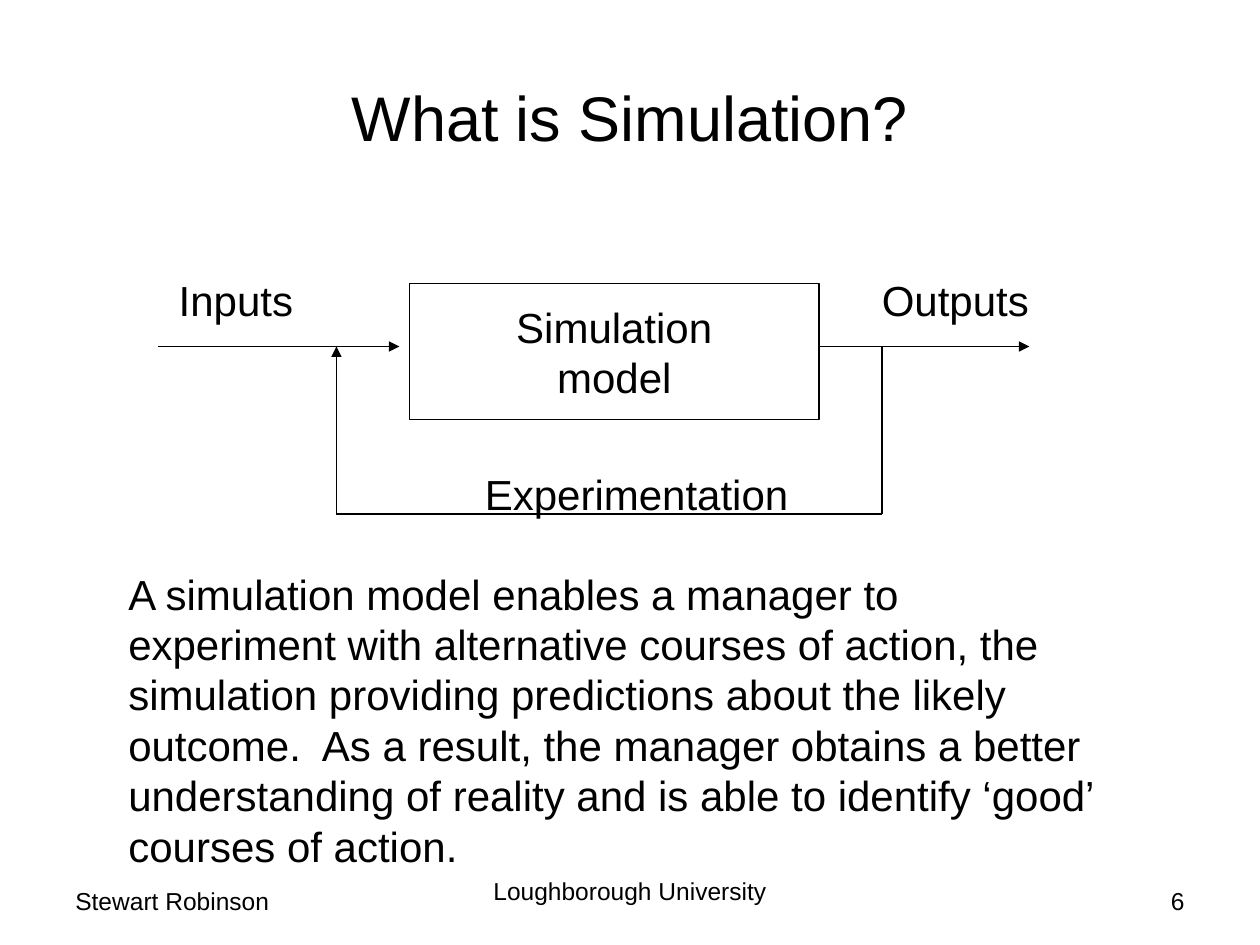
from lxml.etree import SubElement
from pptx import Presentation
from pptx.dml.color import RGBColor
from pptx.enum.shapes import MSO_CONNECTOR, MSO_SHAPE
from pptx.enum.text import MSO_ANCHOR, MSO_AUTO_SIZE, PP_ALIGN
from pptx.oxml.ns import qn
from pptx.util import Inches, Pt

BLACK = "000000"
BODY = (
    "A simulation model enables a manager to experiment with alternative courses "
    "of action, the simulation providing predictions about the likely outcome.  "
    "As a result, the manager obtains a better understanding of reality and is "
    "able to identify ‘good’ courses of action."
)


def color(value):
    return RGBColor.from_string(value)


def write(sp, lines, size, align=PP_ALIGN.LEFT, anchor=MSO_ANCHOR.TOP, wrap=True):
    tf = sp.text_frame
    tf.word_wrap = wrap
    tf.vertical_anchor = anchor
    tf.text = "\n".join(lines)
    for p in tf.paragraphs:
        p.alignment = align
        p.font.name = "Arial"
        p.font.size = Pt(size)
        p.font.color.rgb = color(BLACK)
    return tf


def add_text(s, box, text, size, **style):
    sp = s.shapes.add_textbox(*map(Inches, box))
    return write(sp, [text], size, **style)


def add_line(s, start, end, arrow=False):
    line = s.shapes.add_connector(
        MSO_CONNECTOR.STRAIGHT, *map(Inches, (*start, *end)))
    line.line.color.rgb = color(BLACK)
    line.line.width = Pt(0.75)
    if arrow:
        SubElement(line.line._get_or_add_ln(), qn("a:tailEnd"), type="triangle")
    SubElement(line._element.spPr, qn("a:effectLst"))


def add_title(s, box, text):
    sp = s.shapes.title
    sp.left, sp.top, sp.width, sp.height = map(Inches, box)
    write(sp, [text], 36, PP_ALIGN.CENTER, MSO_ANCHOR.MIDDLE)


def add_diagram(s, box):
    left, top, width, height = box
    right, bottom = left + width, top + height
    flow = top + 0.5
    feedback_in, feedback_out = left + 1.42, right - 1.17
    model_left, model_width = left + 2, 3.25
    model_right = model_left + model_width

    sp = s.shapes.add_shape(
        MSO_SHAPE.RECTANGLE,
        *map(Inches, (model_left, top, model_width, 1.08)))
    sp.shadow.inherit = False
    sp.fill.background()
    sp.line.color.rgb = color(BLACK)
    sp.line.width = Pt(0.75)
    write(sp, ["Simulation", "model"], 24, PP_ALIGN.CENTER,
          MSO_ANCHOR.MIDDLE, wrap=False)

    add_line(s, (left, flow), (model_left - 0.08, flow), arrow=True)
    add_line(s, (model_right, flow), (right, flow), arrow=True)
    add_line(s, (feedback_out, flow), (feedback_out, bottom))
    add_line(s, (feedback_out, bottom), (feedback_in, bottom))
    add_line(s, (feedback_in, bottom), (feedback_in, flow), arrow=True)

    for text, x, y, w in (
        ("Inputs", left + 0.07, top - 0.12, 1.12),
        ("Outputs", right - 1.27, top - 0.12, 1.38),
        ("Experimentation", left + 2.5, bottom - 0.41, 2.64),
    ):
        tf = add_text(s, (x, y, w, 0.5), text, 24, wrap=False)
        tf.auto_size = MSO_AUTO_SIZE.SHAPE_TO_FIT_TEXT


def add_body(s, box):
    tf = add_text(s, box, BODY, 24)
    tf.auto_size = MSO_AUTO_SIZE.SHAPE_TO_FIT_TEXT


def add_footer(s, box):
    left, top, width, height = box
    side, middle = 2.33, 3.17
    add_text(s, (left, top, side, height), "Stewart Robinson", 14,
             anchor=MSO_ANCHOR.MIDDLE)
    tf = add_text(s, (left + (width - middle) / 2, top, middle, height),
                  "Loughborough University", 14, align=PP_ALIGN.CENTER)
    tf.margin_top = 0
    add_text(s, (left + width - side, top, side, height), "6", 14,
             align=PP_ALIGN.RIGHT, anchor=MSO_ANCHOR.MIDDLE)


def main():
    prs = Presentation()
    prs.slide_width, prs.slide_height = Inches(10), Inches(7.5)
    s = prs.slides.add_slide(prs.slide_layouts[5])
    add_footer(s, (0.5, 6.95, 9, 0.4))
    add_title(s, (0.5, 0.3, 9, 1.25), "What is Simulation?")
    add_body(s, (0.92, 4.46, 8, 2.52))
    add_diagram(s, (1.25, 2.25, 6.92, 1.83))
    prs.save("out.pptx")


if __name__ == "__main__":
    main()
